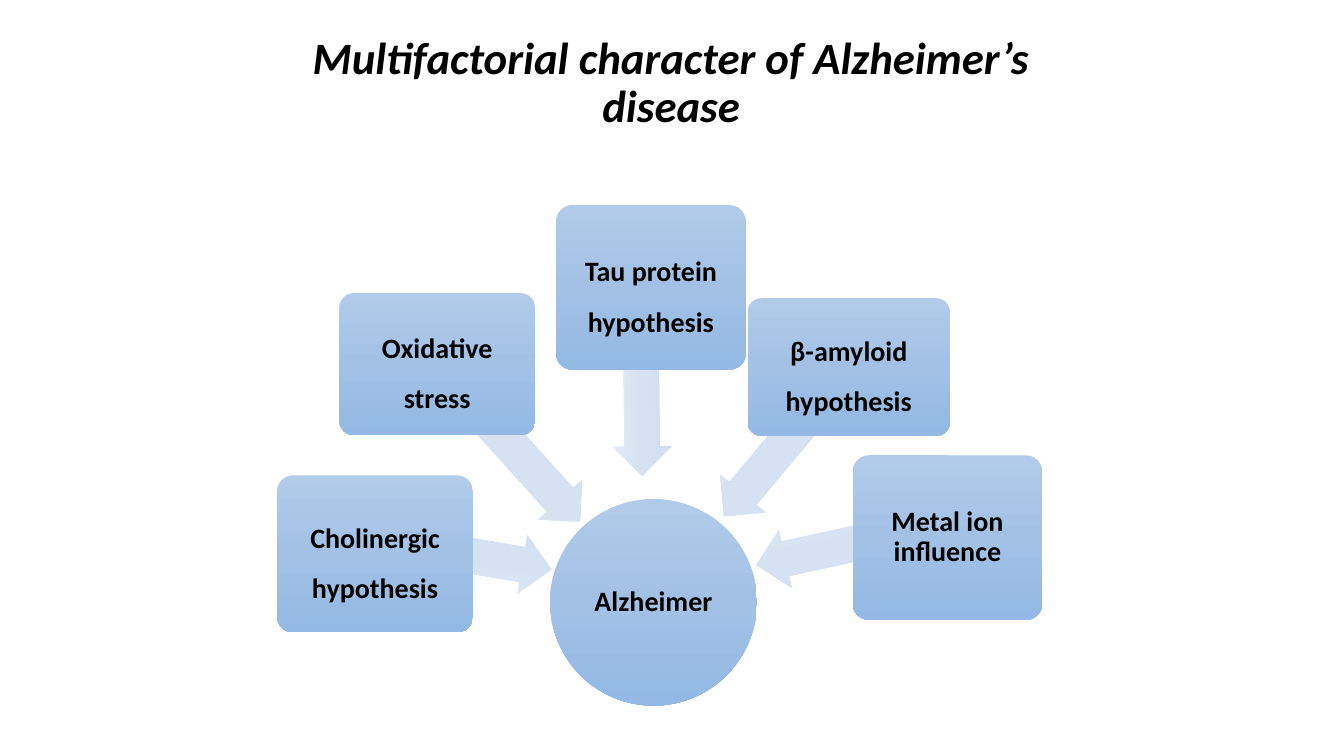
from copy import deepcopy

from pptx import Presentation
from pptx import util as u
from pptx.dml.color import RGBColor
from pptx.enum import shapes, text
from pptx.oxml.ns import qn

COLUMNS, ROWS = 16, 9
BLACK = RGBColor(0x00, 0x00, 0x00)
BOX_GRADIENT = (RGBColor(0xB1, 0xCB, 0xE9), RGBColor(0xA3, 0xC1, 0xE5), RGBColor(0x93, 0xB9, 0xE4))
ARROW_GRADIENT = (RGBColor(0xE3, 0xEB, 0xF6), RGBColor(0xD6, 0xE2, 0xF2), RGBColor(0xD0, 0xDE, 0xF1))
ARROW_HEIGHT = 0.7

# Text, line spacing, box (column, row, width, height), arrow (column, row, length), rotation
FACTORS = (
    ("Cholinergic hypothesis", 1.5, (3.3, 5.66, 2.33, 1.87), (4.56, 6.26, 2.02), 189.7),
    ("Oxidative stress", 1.5, (4.04, 3.49, 2.33, 1.69), (5.35, 5.17, 1.86), 227.9),
    ("Tau protein hypothesis", 1.5, (6.62, 2.44, 2.26, 1.96), (6.44, 4.12, 2.39), 269.5),
    ("Metal ion influence", 0.9, (10.15, 5.42, 2.26, 1.96), (8.98, 6.14, 2.22), 347.7),
    ("β-amyloid hypothesis", 1.5, (8.9, 3.55, 2.41, 1.64), (8.21, 4.92, 2.28), 309.9),
)


class FactorSlide:
    font_format = {"name": "Calibri", "bold": True}

    def __init__(self, presentation):
        self.cell_width = presentation.slide_width / COLUMNS
        self.cell_height = presentation.slide_height / ROWS
        self.slide = presentation.slides.add_slide(presentation.slide_layouts[6])

    def place(self, column, row, width, height):
        """Turn grid units into left, top, width and height."""
        return (u.Emu(round(column * self.cell_width)), u.Emu(round(row * self.cell_height)),
                u.Emu(round(width * self.cell_width)), u.Emu(round(height * self.cell_height)))

    def label(self, shape, wording, size, line_spacing=0.9, inset=None, italic=False):
        frame = shape.text_frame
        frame.word_wrap = True
        frame.vertical_anchor = text.MSO_ANCHOR.MIDDLE
        if inset is not None:
            for side in ("left", "top", "right", "bottom"):
                setattr(frame, f"margin_{side}", u.Inches(inset))
        paragraph = frame.paragraphs[0]
        paragraph.alignment = text.PP_ALIGN.CENTER
        paragraph.line_spacing = line_spacing
        run = paragraph.add_run()
        run.text = wording
        for name, value in {**self.font_format, "size": u.Pt(size), "italic": italic}.items():
            setattr(run.font, name, value)
        run.font.color.rgb = BLACK

    def title(self, wording, area):
        self.label(self.slide.shapes.add_textbox(*self.place(*area)), wording, 32, italic=True)

    def shaded_shape(self, kind, area, gradient, adjustments=()):
        """Add a borderless preset shape with an even top-to-bottom gradient."""
        shape = self.slide.shapes.add_shape(kind, *self.place(*area))
        shape.shadow.inherit = False
        shape.line.fill.background()
        for index, value in enumerate(adjustments):
            shape.adjustments[index] = value
        shape.fill.gradient()
        shape.fill.gradient_angle = 270
        stop_list = shape._element.spPr.find(".//" + qn("a:gsLst"))
        stop_list.insert(1, deepcopy(stop_list[0]))
        for index, (stop, color) in enumerate(zip(shape.fill.gradient_stops, gradient)):
            stop.position = index / (len(gradient) - 1)
            stop.color.rgb = color
        return shape

    def circle(self, wording, area):
        shape = self.shaded_shape(shapes.MSO_SHAPE.OVAL, area, BOX_GRADIENT)
        self.label(shape, wording, 20, inset=0.01)

    def arrow(self, column, row, length, rotation):
        shape = self.shaded_shape(shapes.MSO_SHAPE.LEFT_ARROW, (column, row, length, ARROW_HEIGHT),
                                  ARROW_GRADIENT, (0.6, 0.5))
        shape.rotation = rotation

    def box(self, wording, area, line_spacing):
        shape = self.shaded_shape(shapes.MSO_SHAPE.ROUNDED_RECTANGLE, area, BOX_GRADIENT, (0.1,))
        self.label(shape, wording, 20, line_spacing, inset=0.04)


def main():
    presentation = Presentation()
    presentation.slide_width = u.Inches(13.33)
    presentation.slide_height = u.Inches(7.5)
    page = FactorSlide(presentation)
    page.title("Multifactorial character of Alzheimer’s disease", (2.89, 0.34, 10.2, 1.32))
    page.circle("Alzheimer", (6.55, 5.94, 2.46, 2.46))
    for wording, line_spacing, box, arrow, rotation in FACTORS:
        page.arrow(*arrow, rotation)
        page.box(wording, box, line_spacing)
    presentation.save("out.pptx")


if __name__ == "__main__":
    main()
